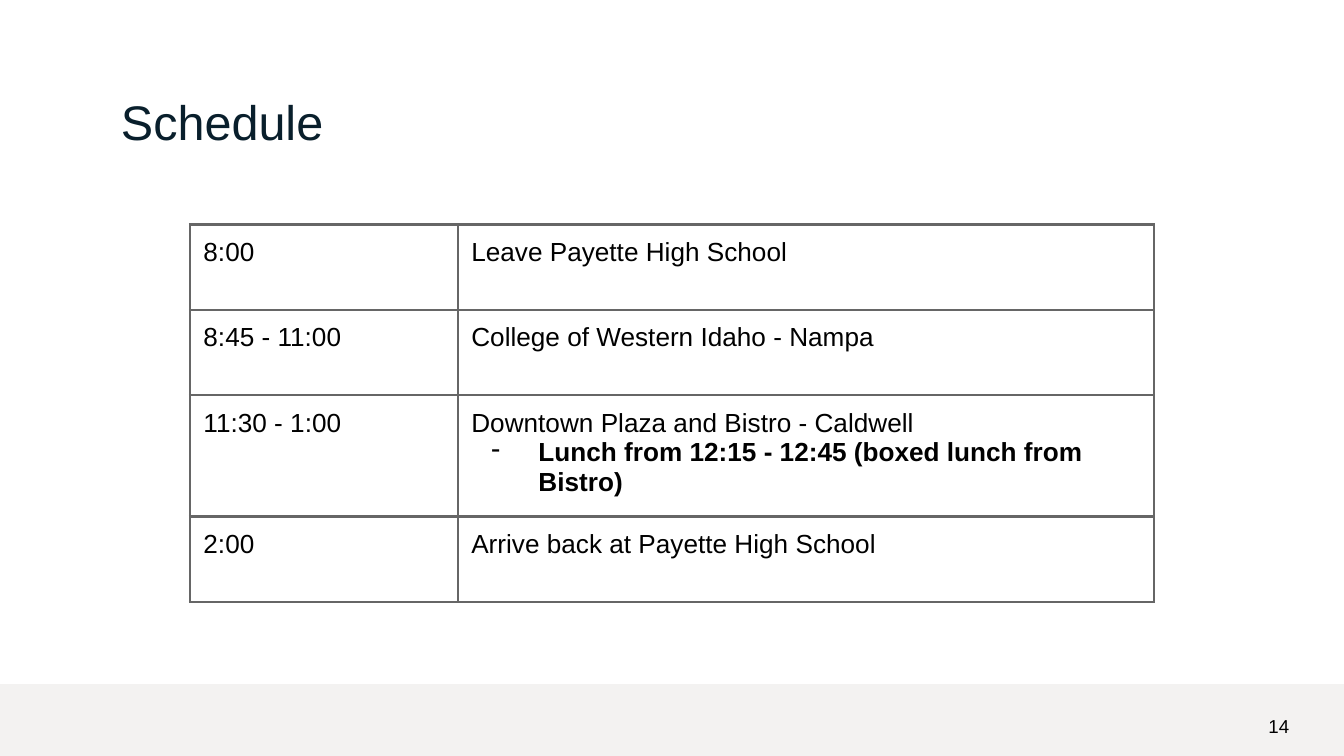
from lxml.etree import SubElement
from pptx import Presentation
from pptx.dml.color import RGBColor
from pptx.enum.shapes import MSO_SHAPE
from pptx.enum.text import MSO_ANCHOR, PP_ALIGN
from pptx.oxml.ns import qn
from pptx.util import Pt

COLORS = {
    "paper": "FFFFFF",
    "band": "F3F2F1",
    "title": "091F2C",
    "text": "000000",
    "border": "666666",
}
INSET = 7.2
SCHEDULE = [
    ("8:00", "Leave Payette High School", None),
    ("8:45 - 11:00", "College of Western Idaho - Nampa", None),
    ("11:30 - 1:00", "Downtown Plaza and Bistro - Caldwell",
     "Lunch from 12:15 - 12:45 (boxed lunch from Bistro)"),
    ("2:00", "Arrive back at Payette High School", None),
]


def rgb(name):
    return RGBColor.from_string(COLORS[name])


def write(paragraph, text, size=14, color="text", bold=False, bullet=None):
    paragraph.alignment = PP_ALIGN.LEFT
    paragraph.space_before = Pt(0)
    if bullet:
        properties = paragraph._p.get_or_add_pPr()
        properties.set("marL", str(Pt(36)))
        properties.set("indent", str(Pt(-25.2)))
        fill = SubElement(properties, qn("a:buClr"))
        SubElement(fill, qn("a:srgbClr"), val=COLORS[color])
        SubElement(properties, qn("a:buChar"), char=bullet)
    run = paragraph.add_run()
    run.text = text
    run.font.name = "Arial"
    run.font.size = Pt(size)
    run.font.bold = bold
    run.font.color.rgb = rgb(color)


class ScheduleSlide:
    """Holds the style and the current slide, and adds its elements."""

    def __init__(self, deck):
        self.slide = deck.slides.add_slide(deck.slide_layouts[5])
        self.slide.background.fill.solid()
        self.slide.background.fill.fore_color.rgb = rgb("paper")

    def frame(self, holder, anchor):
        holder.margin_left = holder.margin_right = Pt(INSET)
        holder.margin_top = holder.margin_bottom = Pt(INSET)
        holder.vertical_anchor = anchor

    def title(self, text, left, top, width, height):
        heading = self.slide.shapes.title
        heading.left, heading.top = Pt(left), Pt(top)
        heading.width, heading.height = Pt(width), Pt(height)
        self.frame(heading.text_frame, MSO_ANCHOR.TOP)
        write(heading.text_frame.paragraphs[0], text, size=26, color="title")

    def band(self, left, top, width, height):
        footer = self.slide.shapes.add_shape(
            MSO_SHAPE.RECTANGLE, Pt(left), Pt(top), Pt(width), Pt(height))
        footer.shadow.inherit = False
        footer.fill.solid()
        footer.fill.fore_color.rgb = rgb("band")
        footer.line.fill.background()

    def label(self, text, left, top, width, height, **style):
        number = self.slide.shapes.add_textbox(
            Pt(left), Pt(top), Pt(width), Pt(height)).text_frame
        number.word_wrap = True
        self.frame(number, MSO_ANCHOR.MIDDLE)
        write(number.paragraphs[0], text, **style)

    def borders(self, cell):
        properties = cell._tc.get_or_add_tcPr()
        for position, side in enumerate(("a:lnL", "a:lnR", "a:lnT", "a:lnB")):
            line = SubElement(properties, qn(side), w=str(Pt(1.5)))
            fill = SubElement(line, qn("a:solidFill"))
            SubElement(fill, qn("a:srgbClr"), val=COLORS["border"])
            properties.insert(position, line)

    def table(self, entries, left, top, widths, heights):
        schedule = self.slide.shapes.add_table(
            len(entries), len(widths), Pt(left), Pt(top),
            Pt(sum(widths)), Pt(sum(heights))).table
        schedule.first_row = schedule.horz_banding = False
        for column, width in zip(schedule.columns, widths):
            column.width = Pt(width)
        for row, height, (time, event, detail) in zip(schedule.rows, heights, entries):
            row.height = Pt(height)
            for cell, text in zip(row.cells, (time, event)):
                self.frame(cell, MSO_ANCHOR.TOP)
                cell.fill.background()
                self.borders(cell)
                write(cell.text_frame.paragraphs[0], text)
            if detail:
                write(row.cells[1].text_frame.add_paragraph(), detail,
                      bold=True, bullet="-")


def main():
    deck = Presentation()
    deck.slide_width, deck.slide_height = Pt(720), Pt(405)
    page = ScheduleSlide(deck)
    page.band(0, 366.5, 720, 38.5)
    page.title("Schedule", 57.6, 41.8, 605.5, 42.5)
    page.label("14", 672.5, 373.7, 43.2, 31, size=10)
    page.table(SCHEDULE, 101.8, 120.2, (143.5, 373), (45.8, 45.8, 61.7, 45.8))
    deck.save("out.pptx")


if __name__ == "__main__":
    main()
